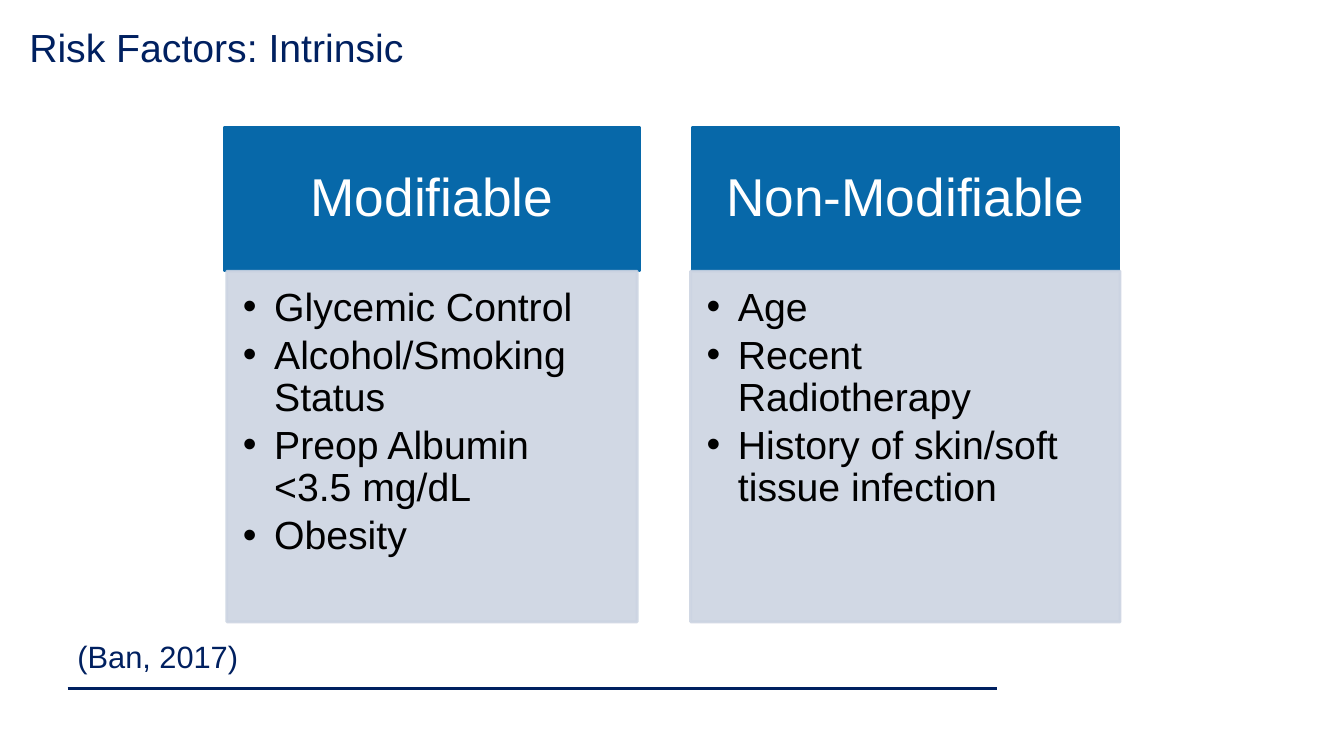
from dataclasses import dataclass

from lxml import etree
from pptx import Presentation
from pptx import util as u
from pptx.dml.color import RGBColor
from pptx.enum import shapes, text
from pptx.oxml.ns import qn


@dataclass(frozen=True)
class Theme:
    font: str = "Arial"
    navy: str = "002060"
    blue: str = "0768A9"
    pale: str = "CCD4E2"
    white: str = "FFFFFF"
    black: str = "000000"
    heading_size: int = 38
    body_size: int = 28
    citation_size: int = 22
    line_width: int = 2
    panel_opacity: int = 90


THEME = Theme()
PANEL_TOP, HEADING_HEIGHT, LIST_HEIGHT = 1.26, 1.43, 3.48
LIST_INDENT = 0.31
FACTORS = [
    ("Modifiable", (2.23, 4.11), (2.25, 4.07),
     ["Glycemic Control", "Alcohol/Smoking Status",
      "Preop Albumin <3.5 mg/dL", "Obesity"]),
    ("Non-Modifiable", (6.87, 4.22), (6.85, 4.26),
     ["Age", "Recent Radiotherapy", "History of skin/soft tissue infection"]),
]


def inches(*lengths):
    return [u.Inches(length) for length in lengths]


def style(para, size, color):
    para.font.name = THEME.font
    para.font.size = u.Pt(size)
    para.font.color.rgb = RGBColor.from_string(color)


def set_insets(frame, left, top, right, bottom):
    frame.margin_left, frame.margin_top = inches(left, top)
    frame.margin_right, frame.margin_bottom = inches(right, bottom)


def add_panel(page, box, color, opacity=100):
    panel = page.shapes.add_shape(shapes.MSO_SHAPE.RECTANGLE, *inches(*box))
    panel.shadow.inherit = False
    panel.fill.solid()
    panel.fill.fore_color.rgb = RGBColor.from_string(color)
    panel.line.color.rgb = RGBColor.from_string(color)
    panel.line.width = u.Pt(THEME.line_width)
    if opacity < 100:
        for shade in panel._element.spPr.iter(qn("a:srgbClr")):
            etree.SubElement(shade, qn("a:alpha"), val=str(opacity * 1000))
    panel.text_frame.word_wrap = True
    return panel.text_frame


def add_bullet(para):
    properties = para._p.get_or_add_pPr()
    properties.set("marL", str(u.Inches(LIST_INDENT)))
    properties.set("indent", str(-u.Inches(LIST_INDENT)))
    etree.SubElement(properties, qn("a:buFont"), typeface=THEME.font)
    etree.SubElement(properties, qn("a:buChar"), char="•")


def add_heading(page, box, label):
    frame = add_panel(page, box, THEME.blue)
    set_insets(frame, 0.3, 0.17, 0.3, 0.17)
    frame.vertical_anchor = text.MSO_ANCHOR.MIDDLE
    para = frame.paragraphs[0]
    para.text = label
    para.alignment = text.PP_ALIGN.CENTER
    para.line_spacing = 0.9
    style(para, THEME.heading_size, THEME.white)


def add_list(page, box, items):
    frame = add_panel(page, box, THEME.pale, THEME.panel_opacity)
    set_insets(frame, 0.16, 0.16, 0.22, 0.24)
    frame.vertical_anchor = text.MSO_ANCHOR.TOP
    frame.text = "\n".join(items)
    for para in frame.paragraphs:
        add_bullet(para)
        para.alignment = text.PP_ALIGN.LEFT
        para.line_spacing = 0.9
        para.space_after = u.Pt(4)
        style(para, THEME.body_size, THEME.black)


def add_title(page, box, label):
    title = page.shapes.title
    title.left, title.top, title.width, title.height = inches(*box)
    frame = title.text_frame
    frame.text = label
    frame.auto_size = text.MSO_AUTO_SIZE.NONE
    frame.vertical_anchor = text.MSO_ANCHOR.BOTTOM
    para = frame.paragraphs[0]
    para.alignment = text.PP_ALIGN.LEFT
    style(para, THEME.body_size, THEME.navy)


def add_footer(page, box, label, rule_width):
    left, top, width, height = box
    rule_top = top + 0.55
    rule = page.shapes.add_connector(
        shapes.MSO_CONNECTOR.STRAIGHT,
        *inches(left, rule_top, left + rule_width, rule_top))
    rule.line.color.rgb = RGBColor.from_string(THEME.navy)
    rule.line.width = u.Pt(THEME.line_width)
    etree.SubElement(rule._element.spPr, qn("a:effectLst"))
    citation = page.shapes.add_textbox(*inches(left, top, width, height))
    citation.text_frame.word_wrap = True
    para = citation.text_frame.paragraphs[0]
    para.text = label
    style(para, THEME.citation_size, THEME.navy)


def build_risk_factors(deck):
    page = deck.slides.add_slide(deck.slide_layouts.get_by_name("Title Only"))
    add_title(page, (0.19, 0.18, 12, 0.57), "Risk Factors: Intrinsic")
    list_top = PANEL_TOP + HEADING_HEIGHT
    for label, heading_span, list_span, items in FACTORS:
        left, width = heading_span
        add_heading(page, (left, PANEL_TOP, width, HEADING_HEIGHT), label)
        left, width = list_span
        add_list(page, (left, list_top, width, LIST_HEIGHT), items)
    add_footer(page, (0.67, 6.28, 4.37, 0.47), "(Ban, 2017)", 9.22)


def main():
    deck = Presentation()
    deck.slide_width, deck.slide_height = inches(13.33, 7.5)
    build_risk_factors(deck)
    deck.save("out.pptx")


if __name__ == "__main__":
    main()
